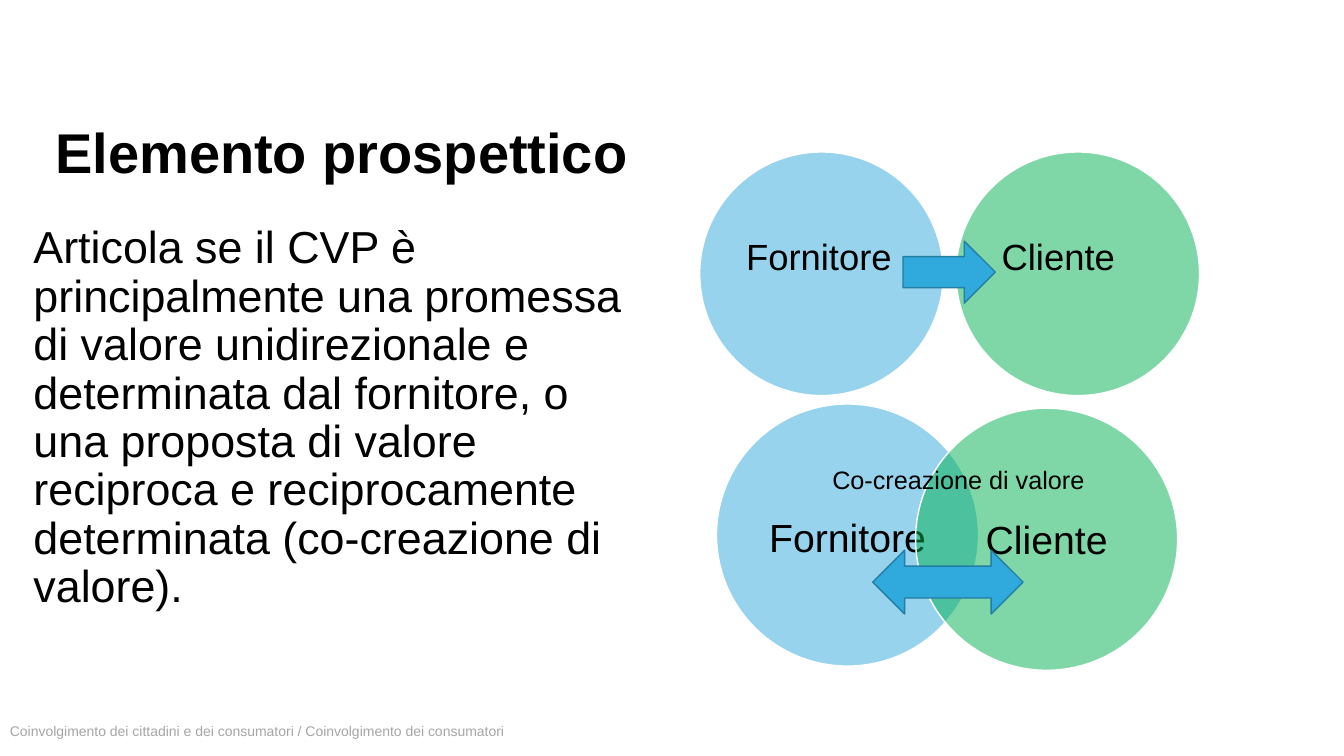
from lxml import etree
from pptx import Presentation
from pptx import util as u
from pptx.dml.color import RGBColor
from pptx.enum import shapes, text
from pptx.oxml import ns

BLUE = RGBColor(0x30, 0xA9, 0xDD)
BLUE_EDGE = RGBColor(0x24, 0x7D, 0xA3)
GREEN = RGBColor(0x00, 0xB0, 0x50)
WHITE = RGBColor(0xFF, 0xFF, 0xFF)
BLACK = RGBColor(0x00, 0x00, 0x00)
GREY = RGBColor(0xA6, 0xA6, 0xA6)

LEFT, CENTER = text.PP_ALIGN.LEFT, text.PP_ALIGN.CENTER
TOP, MIDDLE = text.MSO_ANCHOR.TOP, text.MSO_ANCHOR.MIDDLE
COLUMNS, ROWS = 160, 90  # square cells over the whole slide


def write(frame, words, size, color=BLACK, bold=False, align=LEFT,
          anchor=TOP, spacing=1.0, wrap=True):
    """Put one formatted paragraph in a text frame."""
    frame.word_wrap = wrap
    frame.vertical_anchor = anchor
    paragraph = frame.paragraphs[0]
    paragraph.alignment = align
    paragraph.line_spacing = spacing
    run = paragraph.add_run()
    run.text = words
    run.font.name = "Arial"
    run.font.size = u.Pt(size)
    run.font.bold = bold
    run.font.color.rgb = color


class Board:
    """Current slide, measured in grid columns and rows."""

    def __init__(self, prs):
        self.slide = prs.slides.add_slide(prs.slide_layouts[6])
        self.column = prs.slide_width / COLUMNS
        self.row = prs.slide_height / ROWS

    def cells(self, x, y, width, height):
        return (round(x * self.column), round(y * self.row),
                round(width * self.column), round(height * self.row))

    def text(self, box, words, size, **style):
        frame = self.slide.shapes.add_textbox(*self.cells(*box)).text_frame
        write(frame, words, size, **style)

    def shape(self, kind, box, fill, edge, opacity=100):
        item = self.slide.shapes.add_shape(kind, self.cells(*box)[0], *self.cells(*box)[1:])
        item.shadow.inherit = False
        item.fill.solid()
        item.fill.fore_color.rgb = fill
        item.line.color.rgb = edge
        item.line.width = u.Pt(1)
        if opacity < 100:
            tint = item.fill._xPr.find(".//" + ns.qn("a:srgbClr"))
            etree.SubElement(tint, ns.qn("a:alpha"), val=str(opacity * 1000))

    def party(self, name, center, diameter, label_center, size, fill):
        """A translucent circle followed by its label."""
        x, y = center
        self.shape(shapes.MSO_SHAPE.OVAL,
                   (x - diameter / 2, y - diameter / 2, diameter, diameter),
                   fill, WHITE, opacity=50)
        x, y = label_center
        self.text((x - 11, y - 4, 22, 8), name, size, align=CENTER, anchor=MIDDLE)

    def arrow(self, kind, box):
        self.shape(kind, box, BLUE, BLUE_EDGE)


def main():
    prs = Presentation()
    prs.slide_width, prs.slide_height = u.Inches(13.33), u.Inches(7.5)
    board = Board(prs)

    # Title and explanation
    board.text((5.4, 14.2, 139.8, 8.5), "Elemento prospettico", 40,
               bold=True, anchor=MIDDLE, spacing=0.9)
    board.text((2.8, 26.2, 76.4, 53.2),
               "Articola se il CVP è principalmente una promessa di valore "
               "unidirezionale e determinata dal fornitore, o una proposta di "
               "valore reciproca e reciprocamente determinata (co-creazione di "
               "valore).", 32, spacing=0.9)

    # Reciprocal pair below, one-way pair above
    for name, center, diameter, label_center, size, fill in (
            ("Fornitore", (100.9, 63.7), 31.2, (100.9, 63.9), 28, BLUE),
            ("Cliente", (124.6, 64.2), 31.2, (124.6, 64.2), 28, GREEN),
            ("Fornitore", (97.8, 32.6), 29, (97.5, 30.5), 26, BLUE),
            ("Cliente", (128.3, 32.6), 29, (126, 30.5), 26, GREEN)):
        board.party(name, center, diameter, label_center, size, fill)

    # Direction of the value promise
    board.arrow(shapes.MSO_SHAPE.RIGHT_ARROW, (107.5, 28.7, 11, 7.4))
    board.arrow(shapes.MSO_SHAPE.LEFT_RIGHT_ARROW, (103.9, 65.5, 17.9, 7.6))
    board.text((97.9, 54.7, 33.5, 8.5), "Co-creazione di valore", 18)

    # Footer
    board.text((0, 85.2, 88.9, 3.4),
               "Coinvolgimento dei cittadini e dei consumatori / "
               "Coinvolgimento dei consumatori", 10,
               color=GREY, anchor=text.MSO_ANCHOR.BOTTOM)

    prs.save("out.pptx")


if __name__ == "__main__":
    main()
